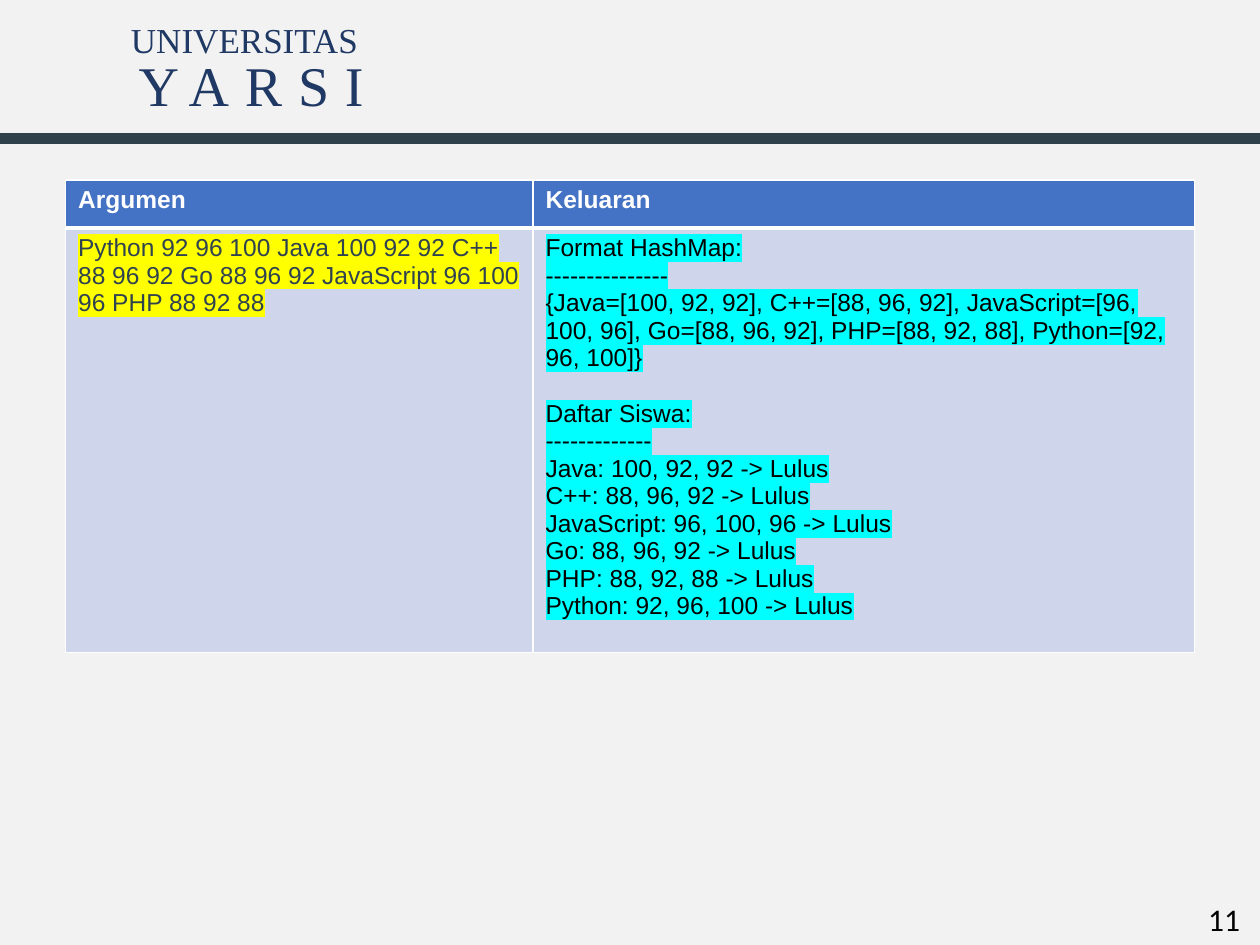
from pptx import Presentation
from pptx import util as u
from pptx.dml.color import RGBColor
from pptx.enum import shapes, text
from pptx.oxml import parse_xml
from pptx.oxml.ns import nsdecls, qn

COLORS = {
    "background": "F2F2F2", "brand": "203864", "rule": "2F424C",
    "header": "4472C4", "body": "CFD5EA", "white": "FFFFFF",
    "black": "000000", "slate": "2F424F",
    "yellow": "FFFF00", "cyan": "00FFFF",
}
SCORES = {
    "Java": "100, 92, 92", "C++": "88, 96, 92", "JavaScript": "96, 100, 96",
    "Go": "88, 96, 92", "PHP": "88, 92, 88", "Python": "92, 96, 100",
}


def rgb(name):
    return RGBColor.from_string(COLORS[name])


class SlideBuilder:
    """Holds the style and the current slide."""

    def __init__(self, prs):
        self.s = prs.slides.add_slide(prs.slide_layouts[6])
        fill = self.s.background.fill
        fill.solid()
        fill.fore_color.rgb = rgb("background")

    def run(self, p, words, color, highlight=None, spacing=None, **fmt):
        r = p.add_run()
        r.text = words
        r.font.color.rgb = rgb(color)
        for key, value in fmt.items():
            setattr(r.font, key, value)
        rPr = r.font._element
        if highlight:
            rPr.find(qn("a:solidFill")).addnext(parse_xml(
                f'<a:highlight {nsdecls("a")}>'
                f'<a:srgbClr val="{COLORS[highlight]}"/></a:highlight>'))
        if spacing:
            rPr.set("spc", str(spacing * 100))

    def label(self, words, box, align, color, **fmt):
        sp = self.s.shapes.add_textbox(*map(u.Inches, box))
        tf = sp.text_frame
        tf.word_wrap = False
        tf.auto_size = text.MSO_AUTO_SIZE.SHAPE_TO_FIT_TEXT
        p = tf.paragraphs[0]
        p.alignment = align
        self.run(p, words, color, **fmt)

    def rule(self, y, width, color, weight):
        line = self.s.shapes.add_connector(
            shapes.MSO_CONNECTOR.STRAIGHT, 0, u.Inches(y), u.Inches(width), u.Inches(y))
        line.line.color.rgb = rgb(color)
        line.line.width = u.Pt(weight)
        line._element.spPr.append(parse_xml(f'<a:effectLst {nsdecls("a")}/>'))

    def table(self, left, top, cols, rows):
        box = (left, top, sum(cols), sum(rows))
        table = self.s.shapes.add_table(
            len(rows), len(cols), *map(u.Inches, box)).table
        table.first_row = table.horz_banding = False
        for col, width in zip(table.columns, cols):
            col.width = u.Inches(width)
        for row, height in zip(table.rows, rows):
            row.height = u.Inches(height)
        return table

    def cell(self, cell, lines, fill, color, bottom=1, gap_before=None, **fmt):
        tcPr = cell._tc.get_or_add_tcPr()
        for side, weight in {"L": 1, "R": 1, "T": 1, "B": bottom}.items():
            tcPr.append(parse_xml(
                f'<a:ln{side} {nsdecls("a")} w="{u.Pt(weight)}"><a:solidFill>'
                f'<a:srgbClr val="{COLORS["white"]}"/></a:solidFill></a:ln{side}>'))
        cell.fill.solid()
        cell.fill.fore_color.rgb = rgb(fill)
        tf = cell.text_frame
        for i, words in enumerate(lines):
            p = tf.add_paragraph() if i else tf.paragraphs[0]
            if words == gap_before:
                p.space_before = u.Pt(16)
            self.run(p, words, color, size=u.Pt(14), name="Arial", **fmt)


def main():
    prs = Presentation()
    prs.slide_width, prs.slide_height = u.Inches(10), u.Inches(7.5)
    b = SlideBuilder(prs)

    # Slide number and university name
    align = text.PP_ALIGN
    b.label("11", (9.49, 7.09, 0.5, 0.4), align.LEFT, "black",
            size=u.Pt(18), name="Calibri")
    b.label("UNIVERSITAS", (0.93, 0.1, 2.02, 0.44), align.CENTER, "brand",
            size=u.Pt(20), name="Times New Roman")
    b.label("YARSI", (0.93, 0.35, 2.13, 0.64), align.CENTER, "brand",
            size=u.Pt(32), name="Times New Roman", spacing=9)
    b.rule(1.1, 10, "rule", 6)

    # Argument and output table
    table = b.table(0.52, 1.43, cols=[3.71, 5.25], rows=[0.38, 3.37])
    for i, heading in enumerate(["Argumen", "Keluaran"]):
        b.cell(table.cell(0, i), [heading], "header", "white", bottom=3, bold=True)

    argument = ("Python 92 96 100 Java 100 92 92 C++ 88 96 92 Go 88 96 92 "
                "JavaScript 96 100 96 PHP 88 92 88")
    b.cell(table.cell(1, 0), [argument], "body", "slate", highlight="yellow")

    hash_map = ", ".join(f"{name}=[{marks}]" for name, marks in SCORES.items())
    # HashMap order differs from the list only where Go follows JavaScript
    output = ["Format HashMap:", "-" * 15, "{" + hash_map + "}",
              "Daftar Siswa:", "-" * 13]
    output += [f"{name}: {marks} -> Lulus" for name, marks in SCORES.items()]
    b.cell(table.cell(1, 1), output, "body", "black",
           highlight="cyan", gap_before="Daftar Siswa:")

    prs.save("out.pptx")


if __name__ == "__main__":
    main()
